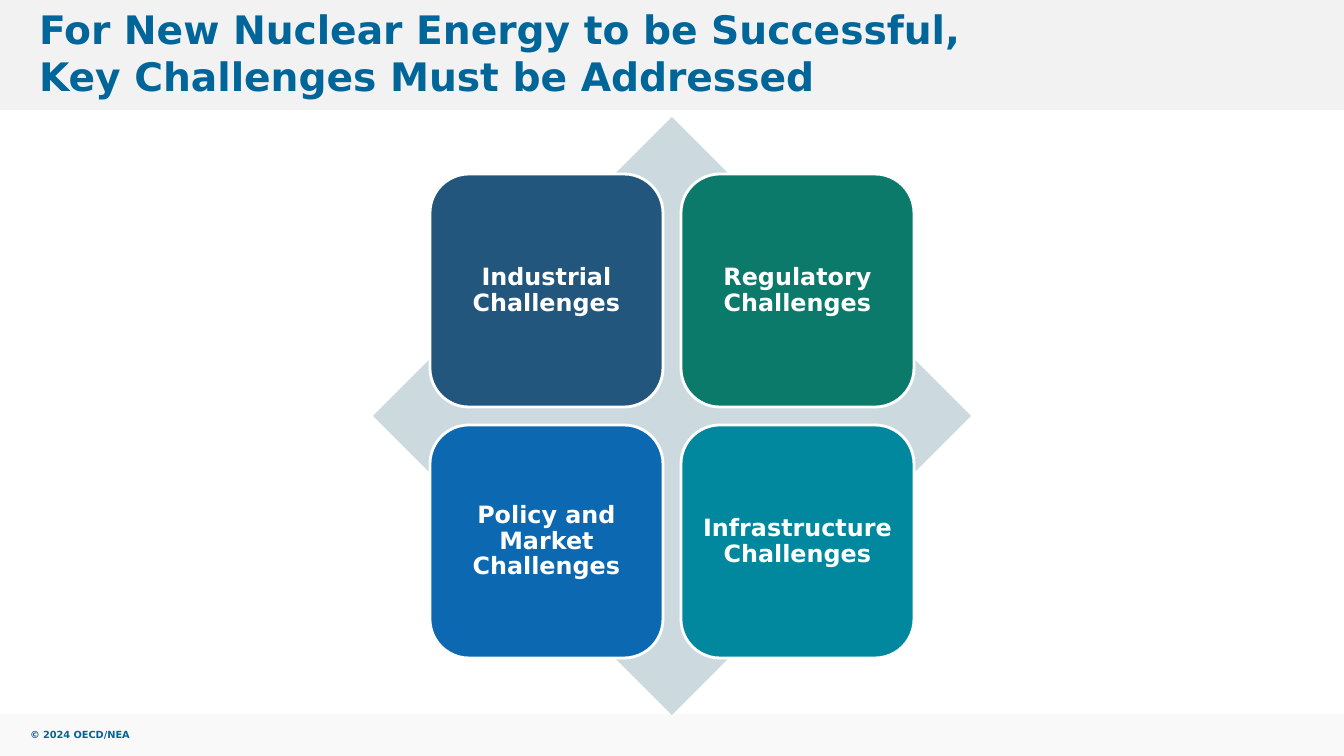
"""Build a slide with four key challenges for new nuclear energy around a diamond."""
from dataclasses import dataclass

from pptx import Presentation
from pptx.dml.color import RGBColor
from pptx.enum.shapes import MSO_SHAPE
from pptx.enum.text import MSO_ANCHOR, MSO_AUTO_SIZE, PP_ALIGN
from pptx.util import Emu, Pt

RECT, ROUND, DIAMOND = MSO_SHAPE.RECTANGLE, MSO_SHAPE.ROUNDED_RECTANGLE, MSO_SHAPE.DIAMOND
TOP, MIDDLE = MSO_ANCHOR.TOP, MSO_ANCHOR.MIDDLE
LEFT, CENTER = PP_ALIGN.LEFT, PP_ALIGN.CENTER
NO_FIT = MSO_AUTO_SIZE.NONE

TITLE = "For New Nuclear Energy to be Successful, \nKey Challenges Must be Addressed"
FOOTER = "© 2024 OECD/NEA"
CARDS = [
    ("Industrial Challenges", "22567C"),
    ("Regulatory Challenges", "0B7A6B"),
    ("Policy and Market Challenges", "0C68B0"),
    ("Infrastructure Challenges", "02889E"),
]


@dataclass(frozen=True)
class Theme:
    font: str = "DejaVu Sans"
    brand: str = "006699"
    white: str = "FFFFFF"
    header: str = "F2F2F2"
    footer: str = "F9F9F9"
    diamond: str = "CCDADF"
    title_pt: int = 28
    card_pt: int = 17
    foot_pt: int = 7


THEME = Theme()
WIDTH, HEIGHT = 1344, 756
HEAD_H, FOOT_H = 110, 42
MID_X, MID_Y = 672, 416
SPAN, CARD, STEP = 598, 233, 251


def px(n):
    return Emu(round(n * 914400 / 100.8))


def add_box(slide, kind, x, y, w, h, fill):
    box = slide.shapes.add_shape(kind, px(x), px(y), px(w), px(h))
    box.shadow.inherit = False
    box.fill.solid()
    box.fill.fore_color.rgb = RGBColor.from_string(fill)
    box.line.fill.background()
    return box


def write(shape, text, size, color, align, anchor, pads):
    frame = shape.text_frame
    frame.word_wrap = True
    frame.auto_size = NO_FIT
    frame.vertical_anchor = anchor
    frame.margin_left, frame.margin_top, frame.margin_right, frame.margin_bottom = map(px, pads)
    para = frame.paragraphs[0]
    para.text = text
    para.alignment = align
    para.font.name = THEME.font
    para.font.size = Pt(size)
    para.font.bold = True
    para.font.color.rgb = RGBColor.from_string(color)
    return para


def add_card(slide, spot, text, fill):
    row, col = divmod(spot, 2)
    x = MID_X + (col - 0.5) * STEP - CARD / 2
    y = MID_Y + (row - 0.5) * STEP - CARD / 2
    card = add_box(slide, ROUND, x, y, CARD, CARD, fill)
    card.line.color.rgb = RGBColor.from_string(THEME.white)
    card.line.width = Pt(2)
    para = write(card, text, THEME.card_pt, THEME.white, CENTER, MIDDLE, (7, 7, 7, 7))
    para.line_spacing = 0.9


def main():
    deck = Presentation()
    deck.slide_width, deck.slide_height = px(WIDTH), px(HEIGHT)
    slide = deck.slides.add_slide(deck.slide_layouts[5])

    title = slide.shapes.title
    title.left, title.top, title.width, title.height = map(px, (29, 0, 1286, 85))
    write(title, TITLE, THEME.title_pt, THEME.brand, LEFT, TOP, (10, 5, 10, 5))

    head = add_box(slide, RECT, 0, 0, WIDTH, HEAD_H, THEME.header)
    foot = add_box(slide, RECT, 0, HEIGHT - FOOT_H, WIDTH, FOOT_H, THEME.footer)
    write(foot, FOOTER, THEME.foot_pt, THEME.brand, LEFT, MIDDLE, (30, 5, 10, 5))
    for bar in (head, foot):
        title.element.addprevious(bar.element)

    add_box(slide, DIAMOND, MID_X - SPAN / 2, MID_Y - SPAN / 2, SPAN, SPAN, THEME.diamond)
    for spot, (text, fill) in enumerate(CARDS):
        add_card(slide, spot, text, fill)

    deck.save("out.pptx")


if __name__ == "__main__":
    main()
